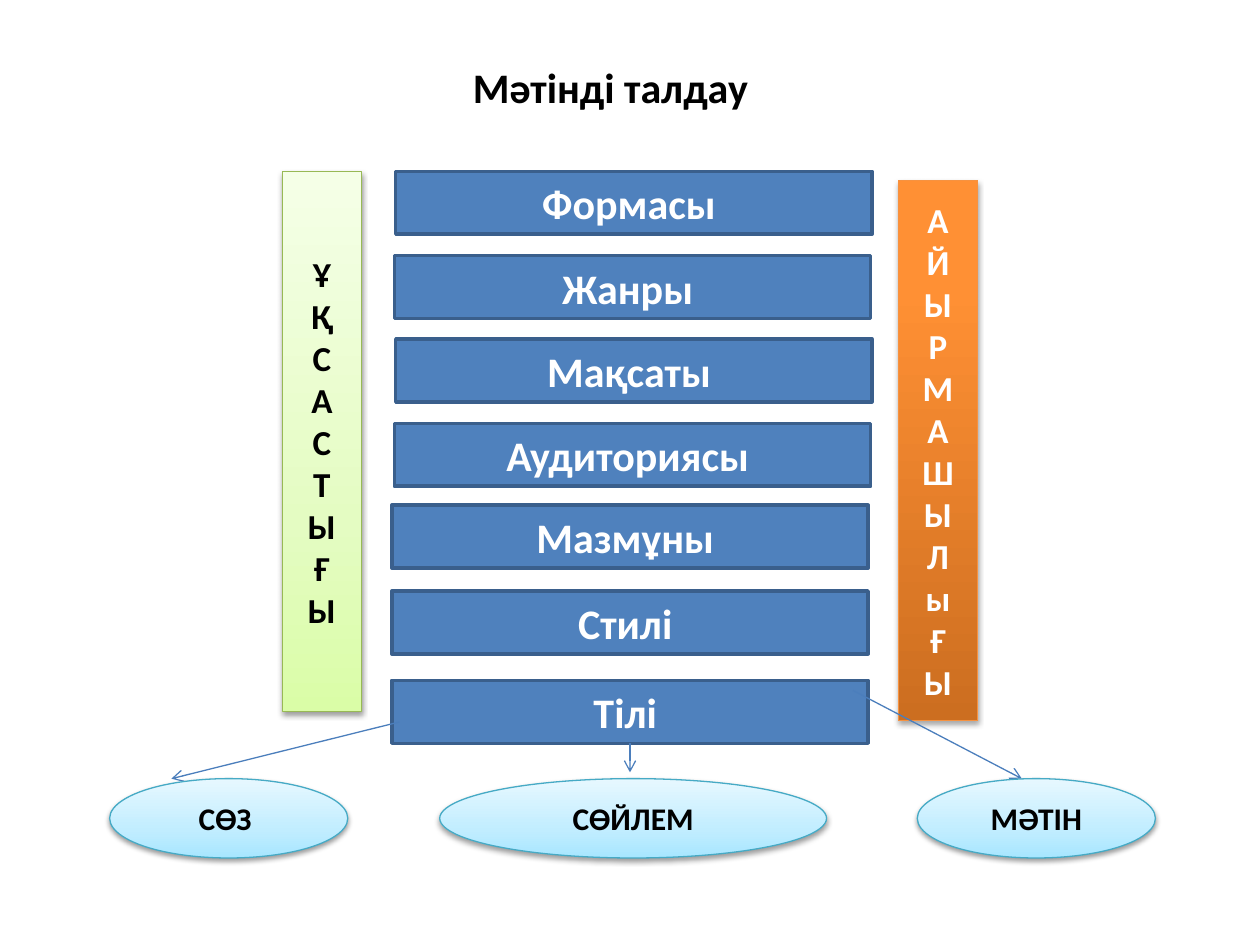
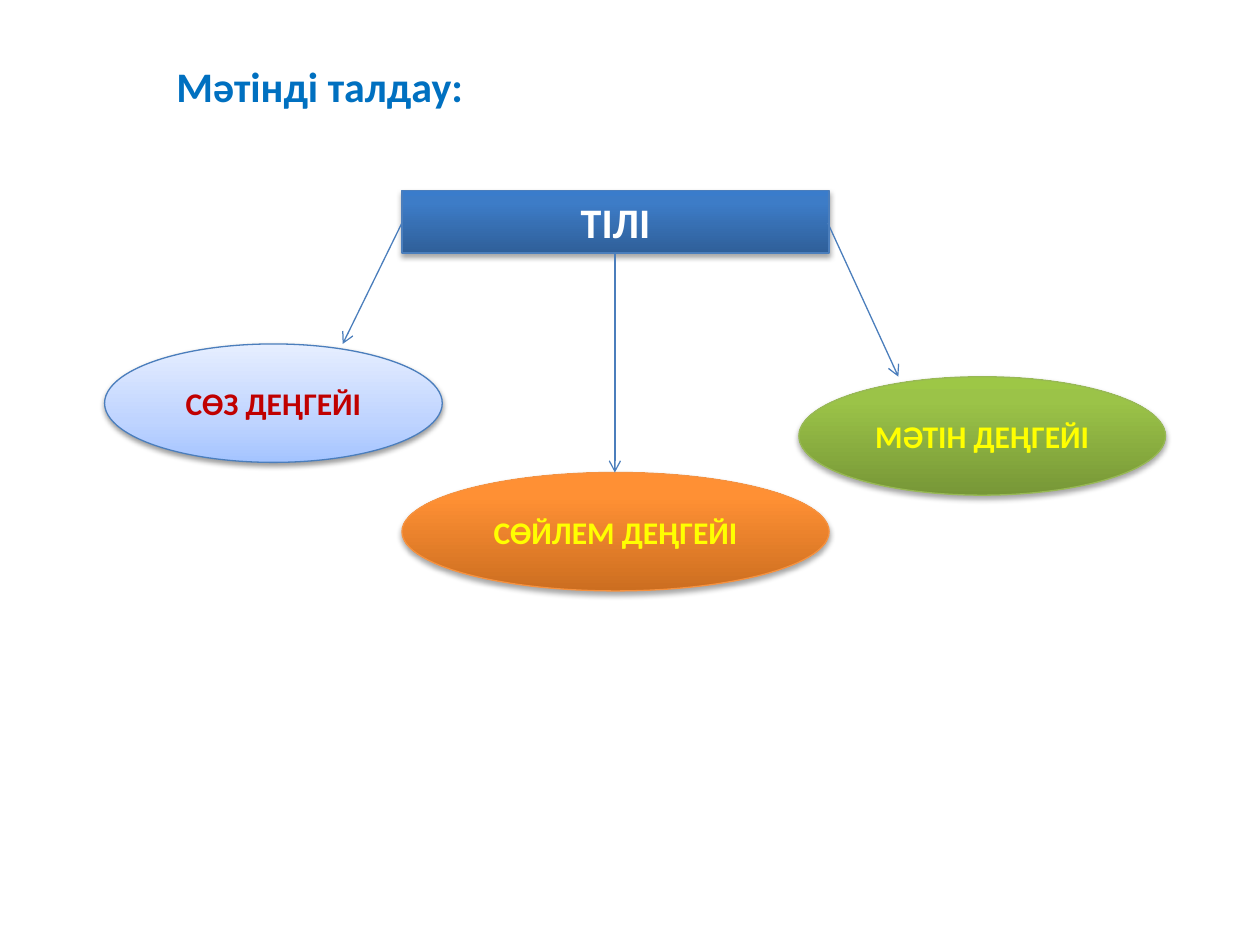
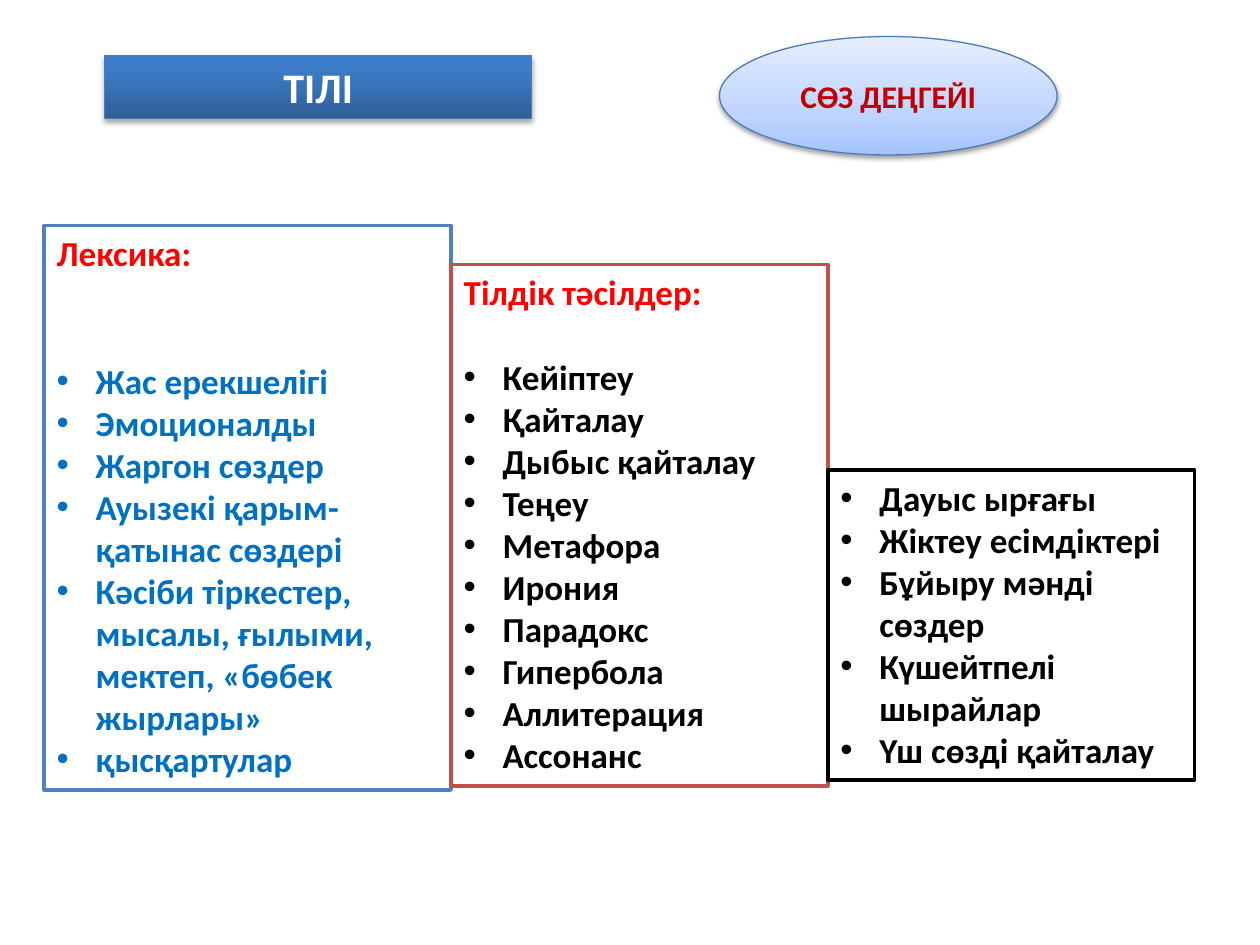
from lxml.etree import SubElement
from pptx import Presentation
from pptx.dml.color import RGBColor
from pptx.enum.shapes import MSO_CONNECTOR, MSO_SHAPE
from pptx.enum.text import MSO_ANCHOR, MSO_AUTO_SIZE, PP_ALIGN
from pptx.oxml.ns import qn
from pptx.util import Inches, Pt

FONT = "Calibri"
BLACK, WHITE, RED, BLUE = "000000", "FFFFFF", "FF0000", "0070C0"
DARK_RED, YELLOW = "C00000", "FFFF00"
ARROW = "4B7EBC"

# Gradient colours from bottom to top, then the outline colour
LIGHT_GREEN = ("DAFDA7", "E4FCC2", "F5FFE7", "98B955")
LIGHT_CYAN = ("A7E6FF", "C1EDFF", "E7F8FF", "46AAC5")
LIGHT_BLUE = ("A4C4FF", "BFD4FF", "E6EEFF", "4B7EBC")
ORANGE = ("CC6E20", "FF9034", "FF9136", "F69240")
DARK_BLUE = ("2F5F99", "3D7CC7", "3A7CCB", "4B7EBC")
DARK_GREEN = ("779737", "9BC348", "9DC746", "98B955")
LIGHT_THEMES = (LIGHT_GREEN, LIGHT_CYAN, LIGHT_BLUE)

RECT, OVAL = MSO_SHAPE.RECTANGLE, MSO_SHAPE.OVAL
TITLE_ONLY, COMPARISON = 5, 4


def rgb(value):
    return RGBColor.from_string(value)


def add_xml(parent, tag, **attributes):
    return SubElement(parent, qn(tag), {k: str(v) for k, v in attributes.items()})


class Deck:
    def __init__(self):
        self.prs = Presentation()
        self.prs.slide_width, self.prs.slide_height = Inches(10), Inches(7.5)
        self.s = None

    def slide(self, layout):
        self.s = self.prs.slides.add_slide(self.prs.slide_layouts[layout])

    def place(self, sp, left, top, width, height):
        sp.left, sp.top = Inches(left), Inches(top)
        sp.width, sp.height = Inches(width), Inches(height)

    def outline(self, sp, color, width):
        sp.line.color.rgb = rgb(color)
        sp.line.width = Pt(width)

    def style_paragraph(self, p, size, color, align):
        p.alignment = align
        p.space_before = Pt(0)
        p.font.name, p.font.size, p.font.bold = FONT, Pt(size), True
        p.font.color.rgb = rgb(color)

    def set_text(self, sp, text, size, color, align=PP_ALIGN.CENTER, anchor=MSO_ANCHOR.MIDDLE):
        tf = sp.text_frame
        tf.text = text
        tf.word_wrap, tf.auto_size = True, MSO_AUTO_SIZE.NONE
        tf.vertical_anchor = anchor
        for p in tf.paragraphs:
            self.style_paragraph(p, size, color, align)

    def glossy(self, sp, theme):
        """Fill with a three-stop gradient and add an outline and a soft shadow."""
        light = theme in LIGHT_THEMES
        sp.fill.gradient()
        sp.fill.gradient_angle = 90
        stops = sp.element.spPr.find(qn("a:gradFill")).find(qn("a:gsLst"))
        for stop in list(stops):
            stops.remove(stop)
        for percent, color in zip((0, 35 if light else 80, 100), theme):
            stop = add_xml(stops, "a:gs", pos=percent * 1000)
            add_xml(stop, "a:srgbClr", val=color)
        self.outline(sp, theme[3], 0.75)
        sp.shadow.inherit = False
        shadow = add_xml(sp.element.spPr.find(qn("a:effectLst")), "a:outerShdw",
                         blurRad=Pt(3.1), dist=Pt(1.6 if light else 1.8),
                         dir=5400000, rotWithShape=0)
        color = add_xml(shadow, "a:srgbClr", val=BLACK)
        add_xml(color, "a:alpha", val=38000 if light else 35000)

    def title(self, text, box, color, align=PP_ALIGN.CENTER, theme=None):
        sp = self.s.shapes.title
        self.place(sp, *box)
        self.set_text(sp, text, 24, color, align, MSO_ANCHOR.TOP)
        if theme:
            self.glossy(sp, theme)

    def glossy_shape(self, kind, text, box, theme, color, size=18):
        sp = self.s.shapes.add_shape(kind, *map(Inches, box))
        self.glossy(sp, theme)
        self.set_text(sp, text, size, color)

    def bar(self, text, left, top):
        sp = self.s.shapes.add_shape(RECT, *map(Inches, (left, top, 3.78, 0.5)))
        sp.shadow.inherit = False
        sp.fill.solid()
        sp.fill.fore_color.rgb = rgb("4F81BD")
        self.outline(sp, "3A5F8C", 2)
        self.set_text(sp, text, 24, WHITE)

    def arrow(self, *ends):
        c = self.s.shapes.add_connector(MSO_CONNECTOR.STRAIGHT, *map(Inches, ends))
        self.outline(c, ARROW, 0.75)
        spPr = c.element.spPr
        add_xml(spPr.find(qn("a:ln")), "a:tailEnd", type="arrow")
        add_xml(spPr, "a:effectLst")

    def list_box(self, idx, box, border, items, color, heading=None, gap=0):
        sp = self.s.placeholders[idx]
        self.place(sp, *box)
        sp.fill.solid()
        sp.fill.fore_color.rgb = rgb(WHITE)
        self.outline(sp, border, 2)
        lines = [heading] + items if heading else items
        self.set_text(sp, "\n".join(lines), 20, color, PP_ALIGN.LEFT, MSO_ANCHOR.TOP)
        for p, line in zip(sp.text_frame.paragraphs, lines):
            pPr = p._p.get_or_add_pPr()
            indent = 0 if line == heading else Inches(0.31)
            pPr.set("marL", str(indent))
            pPr.set("indent", str(-indent))
            run_defaults = pPr.find(qn("a:defRPr"))
            if line == heading:
                p.space_after = Pt(gap)
                p.font.color.rgb = rgb(RED)
                bullet = [add_xml(pPr, "a:buNone")]
            else:
                bullet = [add_xml(pPr, "a:buFont", typeface="Arial"),
                          add_xml(pPr, "a:buChar", char="•")]
            for element in bullet:
                run_defaults.addprevious(element)

    def remove_placeholder(self, idx):
        element = self.s.placeholders[idx].element
        element.getparent().remove(element)


def text_analysis(deck):
    deck.slide(TITLE_ONLY)
    deck.title("Мәтінді талдау", (2.8, 0.44, 4.09, 0.5), BLACK)
    bars = [("Формасы ", 3.14, 1.36), ("Жанры ", 3.13, 2.03), ("Мақсаты ", 3.14, 2.69),
            ("Аудиториясы ", 3.13, 3.36), ("Мазмұны ", 3.11, 4.01),
            ("Стилі ", 3.11, 4.69), ("Тілі ", 3.11, 5.4)]
    for bar in bars:
        deck.bar(*bar)
    columns = [("ҰҚСАСТЫҒЫ", 2.24, 1.36, LIGHT_GREEN, BLACK),
               ("АЙЫРМАШЫЛыҒЫ", 7.13, 1.43, ORANGE, WHITE)]
    for word, left, top, theme, color in columns:
        deck.glossy_shape(RECT, "\n".join(word), (left, top, 0.63, 4.29), theme, color, 20)
    deck.arrow(3.17, 5.73, 1.36, 6.18)
    deck.arrow(5, 5.9, 5, 6.13)
    deck.arrow(6.77, 5.48, 8.11, 6.18)
    for text, left, width in [("СӨЗ ", 0.87, 1.89), ("СӨЙЛЕМ", 3.49, 3.07),
                              ("МӘТІН", 7.28, 1.89)]:
        deck.glossy_shape(OVAL, text, (left, 6.18, width, 0.63), LIGHT_CYAN, BLACK)


def language_levels(deck):
    deck.slide(TITLE_ONLY)
    deck.title("Мәтінді талдау:", (1.3, 0.43, 2.58, 0.5), BLUE, PP_ALIGN.LEFT)
    deck.glossy_shape(RECT, "ТІЛІ", (3.19, 1.51, 3.39, 0.5), DARK_BLUE, WHITE, 24)
    levels = [("СӨЗ ДЕҢГЕЙІ", 0.83, 2.73, 2.68, LIGHT_BLUE, DARK_RED),
              ("СӨЙЛЕМ ДЕҢГЕЙІ", 3.19, 3.75, 3.39, ORANGE, YELLOW),
              ("МӘТІН ДЕҢГЕЙІ", 6.34, 2.99, 2.91, DARK_GREEN, YELLOW)]
    for text, left, top, width, theme, color in levels:
        deck.glossy_shape(OVAL, text, (left, top, width, 0.94), theme, color)
    deck.arrow(3.19, 1.77, 2.72, 2.73)
    deck.arrow(6.57, 1.77, 7.13, 2.99)
    deck.arrow(4.88, 2.02, 4.88, 3.75)


def word_level(deck):
    deck.slide(COMPARISON)
    deck.title("ТІЛІ", (0.83, 0.44, 3.39, 0.5), WHITE, theme=DARK_BLUE)
    deck.glossy_shape(OVAL, "СӨЗ ДЕҢГЕЙІ", (5.71, 0.29, 2.68, 0.94), LIGHT_BLUE, DARK_RED)
    deck.list_box(1, (0.35, 1.79, 3.23, 4.48), "4F81BD", [
        "Жас ерекшелігі", "Эмоционалды", "Жаргон сөздер", "Ауызекі қарым-қатынас сөздері",
        "Кәсіби тіркестер, мысалы, ғылыми, мектеп, «бөбек жырлары»", "қысқартулар",
    ], BLUE, "Лексика:", 48.8)
    deck.list_box(2, (3.58, 2.1, 2.99, 4.14), "C0504D", [
        "Кейіптеу", "Қайталау", "Дыбыс қайталау", "Теңеу", "Метафора", "Ирония",
        "Парадокс", "Гипербола", "Аллитерация", "Ассонанс",
    ], BLACK, "Тілдік тәсілдер:", 24.4)
    deck.list_box(4, (6.57, 3.73, 2.91, 2.46), BLACK, [
        "Дауыс ырғағы", "Жіктеу есімдіктері", "Бұйыру мәнді сөздер",
        "Күшейтпелі шырайлар", "Үш сөзді қайталау",
    ], BLACK)
    deck.remove_placeholder(3)


def main():
    deck = Deck()
    for build in (text_analysis, language_levels, word_level):
        build(deck)
    deck.prs.save("out.pptx")


if __name__ == "__main__":
    main()
